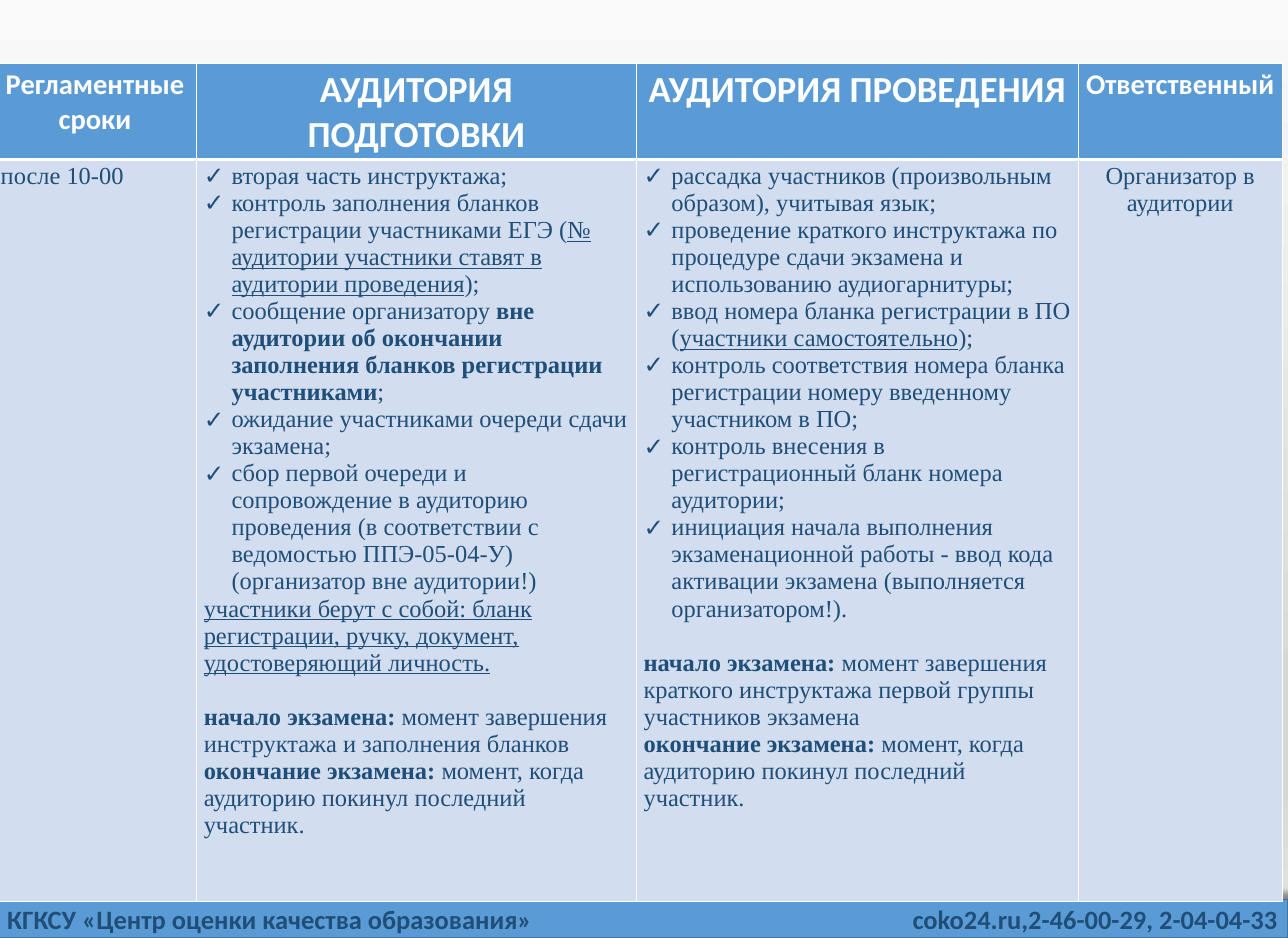
import pptx
import pptx.dml.color
import pptx.enum.shapes
import pptx.enum.text
import pptx.oxml
import pptx.oxml.ns
import pptx.util
from pptx.util import Inches, Pt

COLORS = {"blue": "5B9BD5", "pale": "D2DEEF", "navy": "1F4E79",
          "edge": "43739E", "white": "FFFFFF", "shadow": "000000"}
BACKGROUND_STOPS = [(0, "FAFAFA"), (74, "D7D7D7"), (83, "D7D7D7"), (100, "E4E4E4")]

FOOTER = [(0, 7.44, "КГКСУ «Центр оценки качества образования»"),
          (12.35, 5.22, "coko24.ru,2-46-00-29, 2-04-04-33")]

COLUMN_WIDTHS = [2.77, 6, 6.03, 2.78]
ROW_HEIGHTS = [1.28, 10.12]
HEADERS = [(28, ["Регламентные сроки"]), (36, ["АУДИТОРИЯ", "ПОДГОТОВКИ"]),
           (36, ["АУДИТОРИЯ ПРОВЕДЕНИЯ"]), (28, ["Ответственный"])]

# Each paragraph is (kind, runs); a run is (text, style): "b" bold, "u" underlined.
END_OF_EXAM = ("plain", [("окончание экзамена: ", "b"),
                         ("момент, когда аудиторию покинул последний участник.", "")])
BODY = [
    [("plain", [("после 10-00", "")])],
    [("bullet", [("вторая часть инструктажа;", "")]),
     ("bullet", [("контроль заполнения бланков регистрации участниками ЕГЭ (", ""),
                 ("№ аудитории участники ставят в аудитории проведения", "u"), (");", "")]),
     ("bullet", [("сообщение организатору ", ""),
                 ("вне аудитории об окончании заполнения бланков регистрации участниками", "b"),
                 (";", "")]),
     ("bullet", [("ожидание участниками очереди сдачи экзамена;", "")]),
     ("bullet", [("сбор первой очереди и сопровождение в аудиторию проведения "
                  "(в соответствии с ведомостью ППЭ-05-04-У) (организатор вне аудитории!)", "")]),
     ("plain", [("участники берут с собой: бланк регистрации, ручку, документ, "
                 "удостоверяющий личность.", "u")]),
     ("spaced", [("начало экзамена: ", "b"),
                 ("момент завершения инструктажа и заполнения бланков", "")]),
     END_OF_EXAM],
    [("bullet", [("рассадка участников (произвольным образом), учитывая язык;", "")]),
     ("bullet", [("проведение краткого инструктажа по процедуре сдачи экзамена "
                  "и использованию аудиогарнитуры;", "")]),
     ("bullet", [("ввод номера бланка регистрации в ПО (", ""),
                 ("участники самостоятельно", "u"), (");", "")]),
     ("bullet", [("контроль соответствия номера бланка регистрации номеру введенному "
                  "участником в ПО;", "")]),
     ("bullet", [("контроль внесения в регистрационный бланк номера аудитории;", "")]),
     ("bullet", [("инициация начала выполнения экзаменационной работы - ввод кода "
                  "активации экзамена (выполняется организатором!).", "")]),
     ("spaced", [("начало экзамена: ", "b"),
                 ("момент завершения краткого инструктажа первой группы участников экзамена", "")]),
     END_OF_EXAM],
    [("center", [("Организатор в аудитории", "")])],
]


def rgb(name):
    return pptx.dml.color.RGBColor.from_string(COLORS[name])


def element(tag, content, attributes=""):
    prefix = tag.split(":")[0]
    namespaces = pptx.oxml.ns.nsdecls(*dict.fromkeys([prefix, "a"]))
    return pptx.oxml.parse_xml(f"<{tag} {namespaces} {attributes}>{content}</{tag}>")


def add_span(para, text, size, font="Calibri", color="navy", style="b"):
    span = para.add_run()
    span.text = text
    span.font.name = font
    span.font.size = Pt(size)
    span.font.color.rgb = rgb(color)
    span.font.bold = "b" in style
    span.font.underline = "u" in style


def paint_background(slide):
    stops = "".join(f'<a:gs pos="{place * 1000}"><a:srgbClr val="{color}"/></a:gs>'
                    for place, color in BACKGROUND_STOPS)
    background = element("p:bg", f'<p:bgPr><a:gradFill><a:gsLst>{stops}</a:gsLst>'
                         '<a:lin ang="5400000" scaled="0"/></a:gradFill><a:effectLst/></p:bgPr>')
    slide.element.cSld.insert(0, background)


def add_footer(slide, width):
    bar = slide.shapes.add_shape(pptx.enum.shapes.MSO_SHAPE.RECTANGLE,
                                 0, Inches(12.26), width, Inches(0.53))
    bar.fill.solid()
    bar.fill.fore_color.rgb = rgb("blue")
    bar.line.color.rgb = rgb("edge")
    bar.line.width = Pt(1)
    bar.element.spPr.append(element(
        "a:effectLst", f'<a:outerShdw blurRad="{Pt(4)}" dist="{Pt(10)}" dir="18900000">'
        f'<a:srgbClr val="{COLORS["shadow"]}"><a:alpha val="40000"/></a:srgbClr></a:outerShdw>'))
    for left, box_width, text in FOOTER:
        box = slide.shapes.add_textbox(Inches(left), Inches(12.26), Inches(box_width), Inches(0.54))
        box.text_frame.word_wrap = False
        add_span(box.text_frame.paragraphs[0], text, 26)


def style_cell(cell, fill, top, bottom):
    """Fill the cell and give it white borders, with the top and bottom widths in points."""
    cell.fill.solid()
    cell.fill.fore_color.rgb = rgb(fill)
    line = f'<a:solidFill><a:srgbClr val="{COLORS["white"]}"/></a:solidFill>'
    for index, (side, width) in enumerate([("L", 1), ("R", 1), ("T", top), ("B", bottom)]):
        border = element(f"a:ln{side}", line, f'w="{Pt(width)}"')
        cell._tc.get_or_add_tcPr().insert(index, border)


def next_paragraph(frame, index):
    return frame.add_paragraph() if index else frame.paragraphs[0]


def fill_body(frame, paragraphs):
    for index, (kind, spans) in enumerate(paragraphs):
        para = next_paragraph(frame, index)
        if kind == "bullet":
            properties = para._p.get_or_add_pPr()
            properties.set("marL", str(Inches(0.38)))
            properties.set("indent", str(-Inches(0.38)))
            properties.append(element("a:buFont", "", 'typeface="Arial"'))
            properties.append(element("a:buChar", "", 'char="✓"'))
        elif kind == "spaced":
            para.space_before = Pt(27)
        elif kind == "center":
            para.alignment = pptx.enum.text.PP_ALIGN.CENTER
        for text, style in spans:
            add_span(para, text, 24, "Times New Roman", style=style)


def add_schedule(slide):
    frame = slide.shapes.add_table(2, len(COLUMN_WIDTHS), Inches(-0.09), Inches(0.87),
                                   Inches(sum(COLUMN_WIDTHS)), Inches(sum(ROW_HEIGHTS)))
    table = frame.table
    for row, height in zip(table.rows, ROW_HEIGHTS):
        row.height = Inches(height)
    for index, width in enumerate(COLUMN_WIDTHS):
        table.columns[index].width = Inches(width)
        header, body = table.cell(0, index), table.cell(1, index)
        style_cell(header, "blue", 1, 3)
        style_cell(body, "pale", 3, 1)
        size, lines = HEADERS[index]
        for number, line in enumerate(lines):
            para = next_paragraph(header.text_frame, number)
            para.alignment = pptx.enum.text.PP_ALIGN.CENTER
            add_span(para, line, size, color="white")
        fill_body(body.text_frame, BODY[index])


def main():
    deck = pptx.Presentation()
    deck.slide_width, deck.slide_height = Inches(17.57), Inches(12.79)
    page = deck.slides.add_slide(deck.slide_layouts[6])
    paint_background(page)
    add_footer(page, deck.slide_width)
    add_schedule(page)
    deck.save("out.pptx")


if __name__ == "__main__":
    main()
